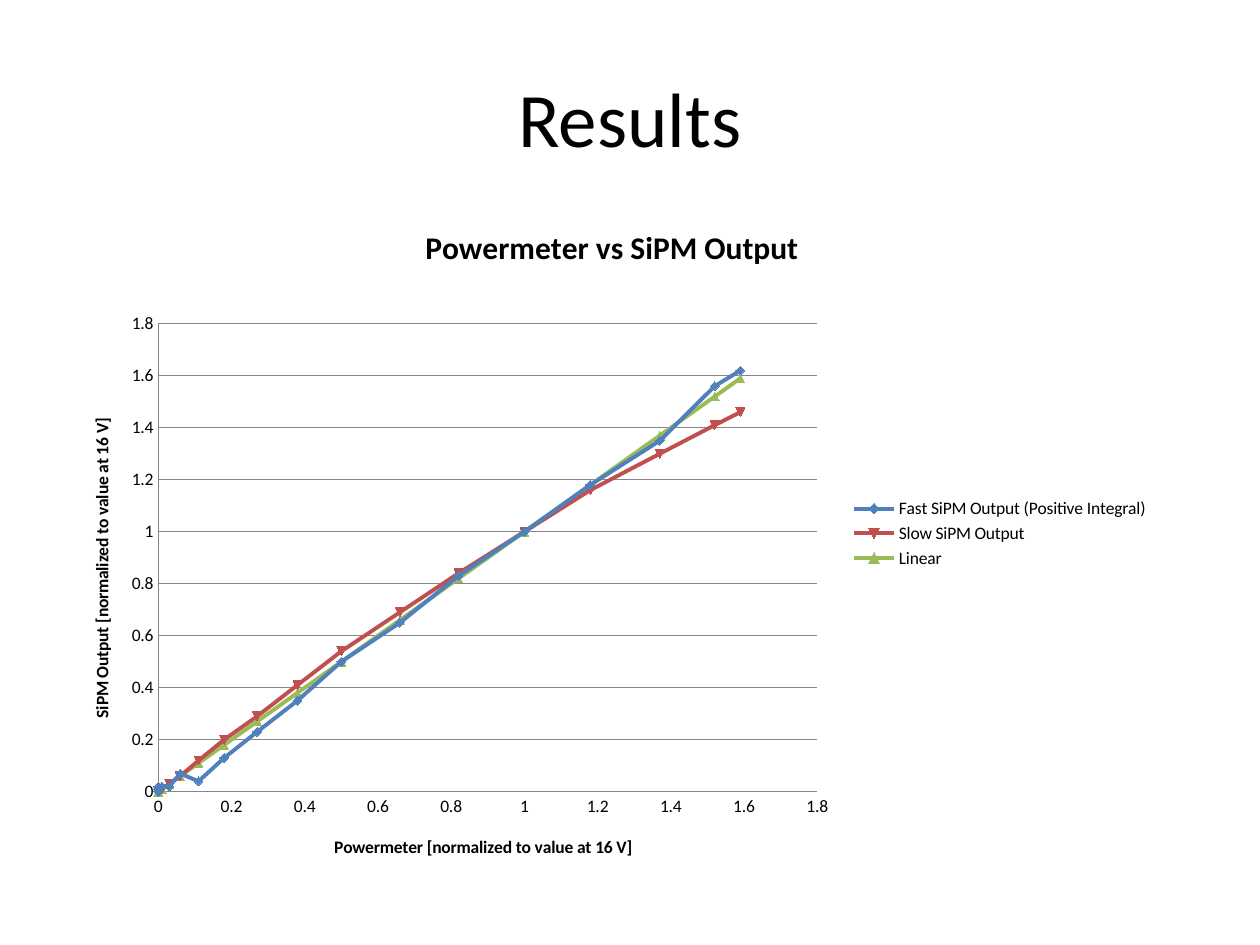
from pptx import Presentation
from pptx.chart.data import XyChartData
from pptx.dml.color import RGBColor
from pptx.enum.chart import XL_CHART_TYPE as ChartType, XL_LEGEND_POSITION as LegendPos
from pptx.enum.chart import XL_TICK_MARK as Tick
from pptx.enum.text import MSO_ANCHOR, PP_ALIGN
from pptx.oxml import parse_xml
from pptx.oxml.ns import nsdecls
from pptx.util import Inches, Pt

BLACK = RGBColor(0x00, 0x00, 0x00)
GRAY = RGBColor(0x86, 0x86, 0x86)
BLUE = RGBColor(0x4F, 0x81, 0xBD)
RED = RGBColor(0xC0, 0x50, 0x4D)
GREEN = RGBColor(0x9B, 0xBB, 0x59)
FONT = "Calibri"
WIDTH, HEIGHT = Inches(10), Inches(7.5)

POWER = [0, 0, 0, 0, 0, 0.01, 0.03, 0.06, 0.11, 0.18,
         0.27, 0.38, 0.5, 0.66, 0.82, 1, 1.18, 1.37, 1.52, 1.59]
FAST = [0, 0, 0.01, 0.01, 0.02, 0.02, 0.02, 0.07, 0.04, 0.13,
        0.23, 0.35, 0.5, 0.65, 0.83, 1, 1.18, 1.35, 1.56, 1.62]
SLOW = [0, 0, 0, 0, 0, 0.01, 0.03, 0.06, 0.12, 0.2,
        0.29, 0.41, 0.54, 0.69, 0.84, 1, 1.16, 1.3, 1.41, 1.46]
SERIES = [
    ("Fast SiPM Output (Positive Integral)", FAST, BLUE),
    ("Slow SiPM Output", SLOW, RED),
    ("Linear", POWER, GREEN),
]


def set_font(font, size, bold=False):
    for name, value in dict(name=FONT, size=Pt(size), bold=bold).items():
        setattr(font, name, value)
    font.color.rgb = BLACK


def box(left, top, width, height):
    """Turn shares of the slide into lengths."""
    return (int(left * WIDTH), int(top * HEIGHT),
            int(width * WIDTH), int(height * HEIGHT))


def layout_xml(x, y, w=None, h=None):
    """Manual chart layout, in shares of the chart's size."""
    values = [("xMode", "edge"), ("yMode", "edge"), ("x", x), ("y", y)]
    if w is not None:
        values.insert(0, ("layoutTarget", "inner"))
        values += [("w", w), ("h", h)]
    body = "".join(f'<c:{tag} val="{val}"/>' for tag, val in values)
    return parse_xml(f'<c:layout {nsdecls("c")}><c:manualLayout>{body}'
                     '</c:manualLayout></c:layout>')


def add_heading(s, text):
    tf = s.shapes.add_textbox(*box(0.05, 0.04, 0.9, 1 / 6)).text_frame
    for name, value in dict(word_wrap=True, vertical_anchor=MSO_ANCHOR.MIDDLE).items():
        setattr(tf, name, value)
    p = tf.paragraphs[0]
    p.alignment = PP_ALIGN.CENTER
    r = p.add_run()
    r.text = text
    set_font(r.font, 44)


def set_title(owner, title, text, size, x, y):
    """Title of the chart or of an axis, placed by its top left corner."""
    p = title.text_frame.paragraphs[0]
    r = p.add_run()
    r.text = text
    set_font(r.font, size, bold=True)
    element = title._element
    for old in element.findall("{*}layout"):
        element.remove(old)
    element.find("{*}tx").addnext(layout_xml(x, y))


def style_axis(axis, text, x, y):
    scale = dict(minimum_scale=0, maximum_scale=1.8, major_unit=0.2,
                 major_tick_mark=Tick.NONE, minor_tick_mark=Tick.NONE)
    for name, value in scale.items():
        setattr(axis, name, value)
    labels = axis.tick_labels
    labels.number_format, labels.number_format_is_linked = "General", False
    set_font(labels.font, 10)
    axis.format.line.color.rgb = GRAY
    axis.format.line.width = Pt(0.75)
    set_title(axis, axis.axis_title, text, 10, x, y)


def add_scatter(s):
    data = XyChartData()
    for name, values, _ in SERIES:
        series = data.add_series(name)
        for point in zip(POWER, values):
            series.add_data_point(*point)
    chart = s.shapes.add_chart(ChartType.XY_SCATTER_SMOOTH,
                               *box(0.043, 0.196, 0.879, 0.737), data).chart
    set_font(chart.font, 10)

    # Titles and axes
    chart.has_title = True
    set_title(chart, chart.chart_title, "Powermeter vs SiPM Output", 18, 0.33, 0.05)
    style_axis(chart.category_axis, "Powermeter [normalized to value at 16 V]", 0.25, 0.93)
    style_axis(chart.value_axis, "SiPM Output [normalized to value at 16 V]", 0.03, 0.33)
    chart.category_axis.has_major_gridlines = False
    chart.value_axis.has_major_gridlines = True
    grid = chart.value_axis.major_gridlines.format.line
    grid.color.rgb, grid.width = GRAY, Pt(0.75)

    # Legend
    chart.has_legend = True
    chart.legend.position = LegendPos.RIGHT
    chart.legend.include_in_layout = False
    set_font(chart.legend.font, 10)

    # Curves
    plot = chart.plots[0]
    plot.vary_by_categories = False
    for series, (_, _, color) in zip(plot.series, SERIES):
        series.smooth = True
        series.format.line.color.rgb = color
        series.format.line.width = Pt(2.25)
        fill = series.marker.format.fill
        fill.solid()
        fill.fore_color.rgb = color

    # Plot area
    area = chart._chartSpace.chart.plotArea
    for old in area.findall("{*}layout"):
        area.remove(old)
    area.insert(0, layout_xml(0.094, 0.199, 0.595, 0.672))


def main():
    prs = Presentation()
    prs.slide_width, prs.slide_height = WIDTH, HEIGHT
    s = prs.slides.add_slide(prs.slide_layouts[6])
    add_heading(s, "Results")
    add_scatter(s)
    prs.save("out.pptx")


if __name__ == "__main__":
    main()
